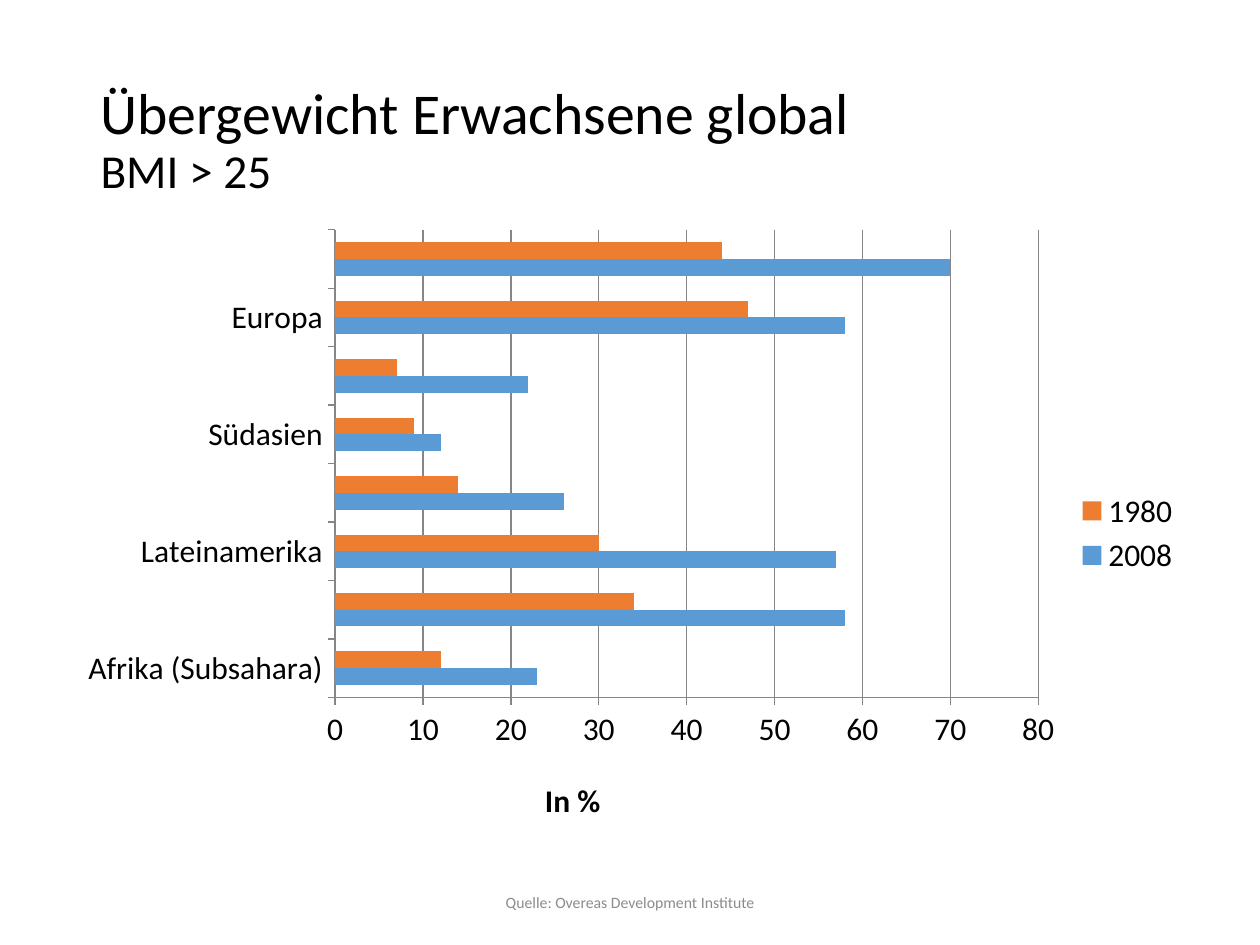
import pptx
import pptx.chart.data
import pptx.dml.color
import pptx.enum.chart
import pptx.enum.text
import pptx.oxml
import pptx.oxml.ns
import pptx.util

RGB = pptx.dml.color.RGBColor
BLACK = RGB(0x00, 0x00, 0x00)
GRAY = RGB(0x8C, 0x8C, 0x8C)
LINE = RGB(0x86, 0x86, 0x86)
BLUE = RGB(0x5B, 0x9B, 0xD5)
ORANGE = RGB(0xED, 0x7D, 0x31)

AREAS = [
    ("Afrika (Subsahara)", 23, 12),
    ("", 58, 34),
    ("Lateinamerika", 57, 30),
    ("", 26, 14),
    ("Südasien", 12, 9),
    ("", 22, 7),
    ("Europa", 58, 47),
    ("", 70, 44),
]
YEARS = {"2008": BLUE, "1980": ORANGE}


def style(font, size, color=BLACK, bold=False, name="Calibri"):
    font.name, font.size, font.bold = name, pptx.util.Pt(size), bold
    font.color.rgb = color


def write(para, text, **form):
    run = para.add_run()
    run.text = text
    style(run.font, **form)


def place(node, index, **shares):
    tag = pptx.oxml.ns.qn("c:layout")
    for old in node.findall(tag):
        node.remove(old)
    modes = '<c:layoutTarget val="inner"/>' if "w" in shares else ""
    modes += '<c:xMode val="edge"/><c:yMode val="edge"/>'
    sizes = "".join(f'<c:{key} val="{val}"/>' for key, val in shares.items())
    node.insert(index, pptx.oxml.parse_xml(
        f'<c:layout {pptx.oxml.ns.nsdecls("c")}><c:manualLayout>'
        f"{modes}{sizes}</c:manualLayout></c:layout>"))


class Deck:
    """Hold the slide and place elements by shares of its size."""

    def __init__(self, wide, high):
        self.prs = pptx.Presentation()
        self.prs.slide_width = pptx.util.Inches(wide)
        self.prs.slide_height = pptx.util.Inches(high)
        self.slide = self.prs.slides.add_slide(self.prs.slide_layouts[6])

    def box(self, left, top, width, height):
        wide, high = self.prs.slide_width, self.prs.slide_height
        return [int(share * side) for share, side in
                zip((left, top, width, height), (wide, high, wide, high))]

    def text(self, area, parts, align=pptx.enum.text.PP_ALIGN.LEFT, space=1.0):
        frame = self.slide.shapes.add_textbox(*self.box(*area)).text_frame
        frame.word_wrap = True
        frame.vertical_anchor = pptx.enum.text.MSO_ANCHOR.MIDDLE
        para = frame.paragraphs[0]
        para.alignment, para.line_spacing = align, space
        for index, (text, form) in enumerate(parts):
            if index:
                para.add_line_break()
            write(para, text, **form)

    def bars(self, area, unit):
        data = pptx.chart.data.CategoryChartData()
        names, *cols = zip(*AREAS)
        data.categories = names
        for year, vals in zip(YEARS, cols):
            data.add_series(year, vals)
        kind = pptx.enum.chart.XL_CHART_TYPE.BAR_CLUSTERED
        chart = self.slide.shapes.add_chart(kind, *self.box(*area), data).chart
        style(chart.font, 18)
        chart.has_title = False
        plot = chart.plots[0]
        plot.gap_width, plot.overlap, plot.vary_by_categories = 150, 0, False
        for row, color in zip(plot.series, YEARS.values()):
            row.format.fill.solid()
            row.format.fill.fore_color.rgb = color
        self.axes(chart, unit)
        chart.has_legend = True
        chart.legend.position = pptx.enum.chart.XL_LEGEND_POSITION.RIGHT
        chart.legend.include_in_layout = False
        style(chart.legend.font, 18)
        root = chart.plots[0]._element.getparent()
        place(root, 0, x=0.24, y=0.02, w=0.62, h=0.75)
        place(chart.legend._element, 1, x=0.89, y=0.43)

    def axes(self, chart, unit):
        cat, val = chart.category_axis, chart.value_axis
        for axis in (cat, val):
            axis.major_tick_mark = pptx.enum.chart.XL_TICK_MARK.OUTSIDE
            axis.minor_tick_mark = pptx.enum.chart.XL_TICK_MARK.NONE
            axis.format.line.color.rgb = LINE
            style(axis.tick_labels.font, 18)
        skip = pptx.oxml.parse_xml(
            f'<c:tickLblSkip {pptx.oxml.ns.nsdecls("c")} val="2"/>')
        cat._element.find(pptx.oxml.ns.qn("c:noMultiLvlLbl")).addprevious(skip)
        val.minimum_scale, val.maximum_scale, val.major_unit = 0, 80, 10
        val.has_major_gridlines = True
        val.major_gridlines.format.line.color.rgb = LINE
        title = val.axis_title
        write(title.text_frame.paragraphs[0], unit, size=18, bold=True)
        place(title._element, 1, x=0.42, y=0.89)


def main():
    deck = Deck(10, 7.5)
    deck.text((0.07, 0.05, 0.86, 0.2),
              [("Übergewicht Erwachsene global", {"size": 33}),
               ("BMI > 25", {"size": 27})], space=0.9)
    deck.bars((0.05, 0.23, 0.9, 0.66), "In %")
    deck.text((0.33, 0.93, 0.34, 0.05),
              [("Quelle: Overeas Development Institute",
                {"size": 9, "color": GRAY})],
              align=pptx.enum.text.PP_ALIGN.CENTER)
    deck.prs.save("out.pptx")


if __name__ == "__main__":
    main()
